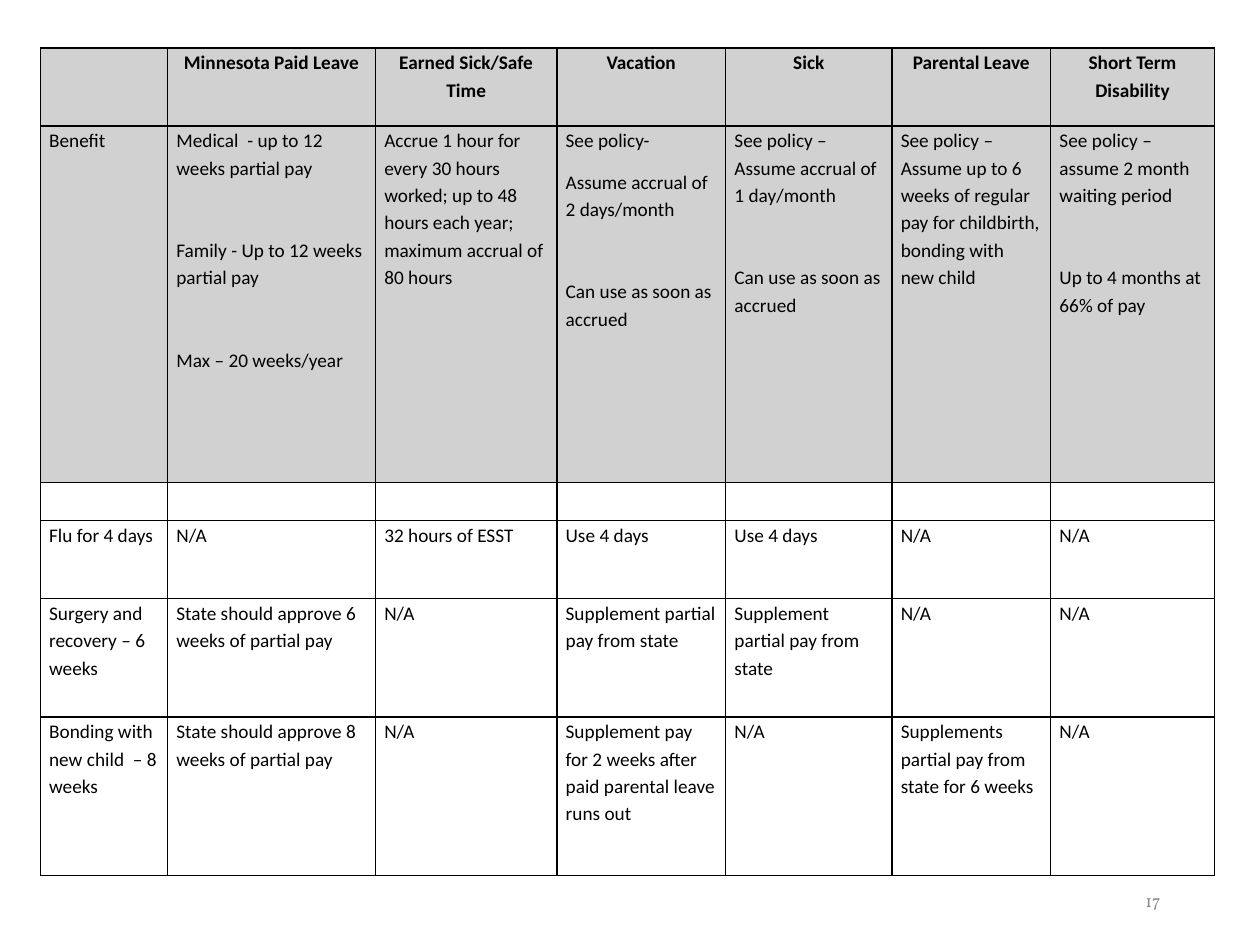
from dataclasses import dataclass

from lxml.etree import SubElement
from pptx import Presentation
from pptx.dml.color import RGBColor
from pptx.enum.text import MSO_ANCHOR, PP_ALIGN
from pptx.oxml.ns import qn
from pptx.util import Inches, Pt


@dataclass(frozen=True)
class Theme:
    text: str = "000000"
    border: str = "000000"
    shade: str = "D1D1D1"
    number: str = "8C8C8C"
    body_font: str = "Calibri"
    number_font: str = "Vollkorn"
    body_size: float = 11
    number_size: float = 10
    border_width: float = 1
    line_spacing: float = 1.15
    paragraph_gap: float = 8
    block_gap: float = 31.4


THEME = Theme()
COLUMN_WIDTHS = [1.01, 1.65, 1.44, 1.34, 1.32, 1.26, 1.3]
ROW_HEIGHTS = [0.62, 2.83, 0.3, 0.62, 0.94, 1.26]
SHADED_ROWS = 2
NOT_APPLICABLE = [["N/A"]]

# Each cell is a list of blocks, and each block is a list of paragraphs.
HEADINGS = [
    [],
    [["Minnesota Paid Leave"]],
    [["Earned Sick/Safe Time"]],
    [["Vacation"]],
    [["Sick"]],
    [["Parental Leave"]],
    [["Short Term Disability"]],
]
BENEFITS = [
    [["Benefit"]],
    [
        ["Medical  - up to 12 weeks partial pay"],
        ["Family - Up to 12 weeks partial pay"],
        ["Max – 20 weeks/year"],
    ],
    [["Accrue 1 hour for every 30 hours worked; up to 48 hours each year; "
      "maximum accrual of 80 hours"]],
    [
        ["See policy-", "Assume accrual of 2 days/month"],
        ["Can use as soon as accrued"],
    ],
    [
        ["See policy – Assume accrual of 1 day/month"],
        ["Can use as soon as accrued"],
    ],
    [["See policy – Assume up to 6 weeks of regular pay for childbirth, "
      "bonding with new child"]],
    [
        ["See policy – assume 2 month waiting period"],
        ["Up to 4 months at 66% of pay"],
    ],
]
FLU = [
    [["Flu for 4 days"]],
    NOT_APPLICABLE,
    [["32 hours of ESST"]],
    [["Use 4 days"]],
    [["Use 4 days"]],
    NOT_APPLICABLE,
    NOT_APPLICABLE,
]
SURGERY = [
    [["Surgery and recovery – 6 weeks"]],
    [["State should approve 6 weeks of partial pay"]],
    NOT_APPLICABLE,
    [["Supplement partial pay from state"]],
    [["Supplement partial pay from state"]],
    NOT_APPLICABLE,
    NOT_APPLICABLE,
]
BONDING = [
    [["Bonding with new child  – 8 weeks"]],
    [["State should approve 8 weeks of partial pay"]],
    NOT_APPLICABLE,
    [["Supplement pay for 2 weeks after paid parental leave runs out"]],
    NOT_APPLICABLE,
    [["Supplements partial pay from state for 6 weeks"]],
    NOT_APPLICABLE,
]
SPACER = [[] for _ in COLUMN_WIDTHS]
ROWS = [HEADINGS, BENEFITS, SPACER, FLU, SURGERY, BONDING]


def add_run(paragraph, text, font, size, color, bold=False):
    run = paragraph.add_run()
    run.text = text
    run.font.name = font
    run.font.size = Pt(size)
    run.font.bold = bold
    run.font.color.rgb = RGBColor.from_string(color)


def set_borders(cell):
    properties = cell._tc.get_or_add_tcPr()
    for side in ("a:lnL", "a:lnR", "a:lnT", "a:lnB"):
        line = SubElement(properties, qn(side), w=str(Pt(THEME.border_width)))
        fill = SubElement(line, qn("a:solidFill"))
        SubElement(fill, qn("a:srgbClr"), val=THEME.border)


def fill_cell(cell, blocks, is_heading, is_shaded):
    set_borders(cell)
    if is_shaded:
        cell.fill.solid()
        cell.fill.fore_color.rgb = RGBColor.from_string(THEME.shade)
    else:
        cell.fill.background()
    cell.margin_left = cell.margin_right = Inches(0.07)
    cell.margin_top = cell.margin_bottom = Inches(0)

    frame = cell.text_frame
    paragraph = frame.paragraphs[0]
    if not blocks:
        add_run(paragraph, "", THEME.body_font, THEME.body_size, THEME.text)
    is_first = True
    for block in blocks:
        for text in block:
            if not is_first:
                paragraph = frame.add_paragraph()
            is_first = False
            paragraph.alignment = PP_ALIGN.CENTER if is_heading else PP_ALIGN.LEFT
            paragraph.line_spacing = THEME.line_spacing
            paragraph.space_after = Pt(THEME.paragraph_gap)
            add_run(paragraph, text, THEME.body_font, THEME.body_size,
                    THEME.text, is_heading)
        paragraph.space_after = Pt(THEME.block_gap)
    paragraph.space_after = Pt(THEME.paragraph_gap)


def add_leave_table(slide):
    table = slide.shapes.add_table(
        len(ROWS), len(COLUMN_WIDTHS), Inches(0.32), Inches(0.38),
        Inches(sum(COLUMN_WIDTHS)), Inches(sum(ROW_HEIGHTS)),
    ).table
    table.first_row = table.horz_banding = False
    for column, width in zip(table.columns, COLUMN_WIDTHS):
        column.width = Inches(width)
    for index, (row, height) in enumerate(zip(table.rows, ROW_HEIGHTS)):
        row.height = Inches(height)
        for cell, blocks in zip(row.cells, ROWS[index]):
            fill_cell(cell, blocks, index == 0, index < SHADED_ROWS)


def add_page_number(slide, number):
    box = slide.shapes.add_textbox(
        Inches(7.06), Inches(6.95), Inches(2.25), Inches(0.4))
    frame = box.text_frame
    frame.word_wrap = True
    frame.vertical_anchor = MSO_ANCHOR.MIDDLE
    paragraph = frame.paragraphs[0]
    paragraph.alignment = PP_ALIGN.RIGHT
    add_run(paragraph, number, THEME.number_font, THEME.number_size, THEME.number)


def main():
    presentation = Presentation()
    presentation.slide_width = Inches(10)
    presentation.slide_height = Inches(7.5)
    slide = presentation.slides.add_slide(presentation.slide_layouts[6])
    add_page_number(slide, "17")
    add_leave_table(slide)
    presentation.save("out.pptx")


if __name__ == "__main__":
    main()
